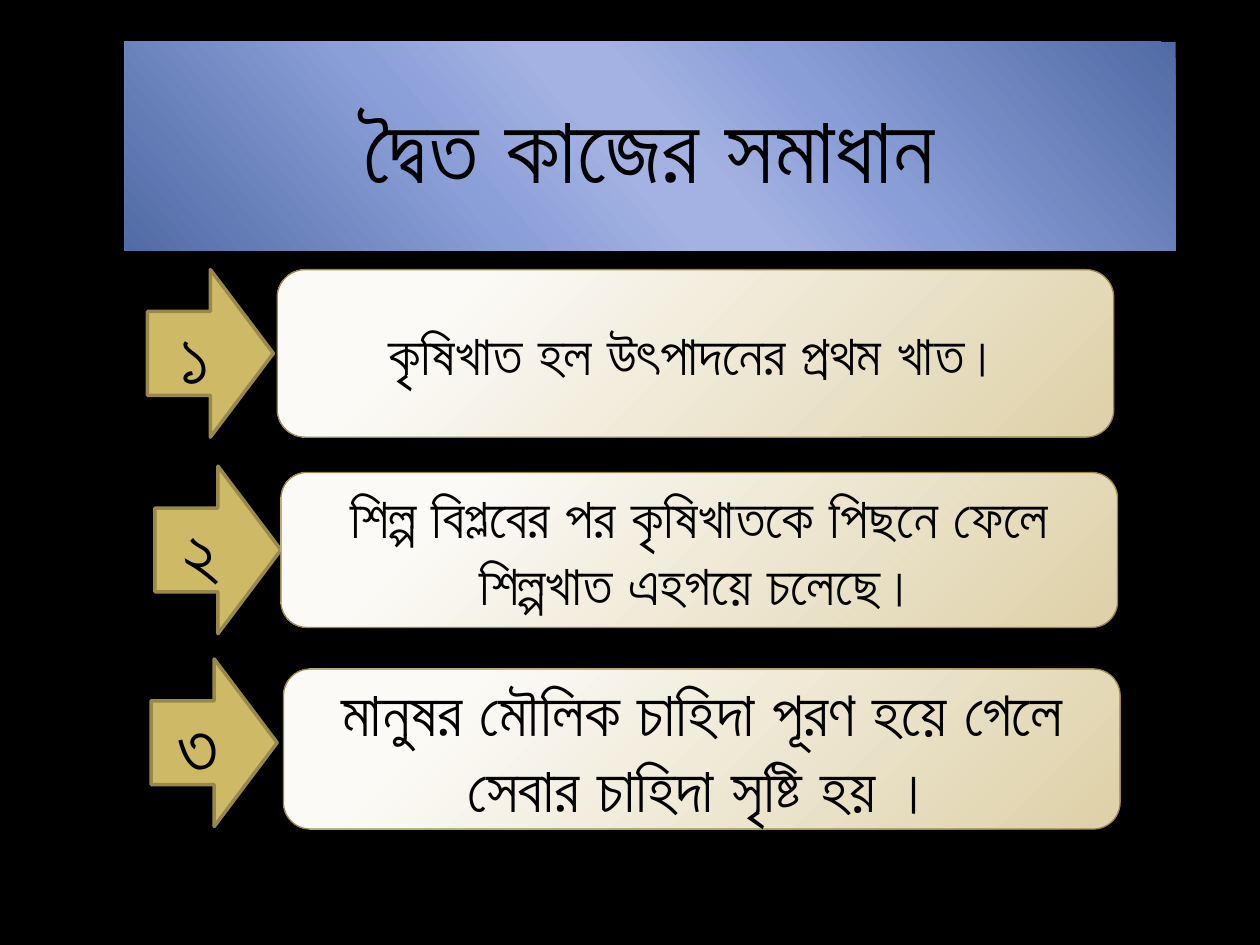
from lxml.etree import SubElement
from pptx import Presentation
from pptx.dml.color import RGBColor
from pptx.enum.shapes import MSO_SHAPE as Preset
from pptx.enum.text import MSO_ANCHOR as Anchor, MSO_AUTO_SIZE as AutoSize, PP_ALIGN as Align
from pptx.oxml.ns import qn
from pptx.util import Inches, Pt

TITLE = "দ্বৈত কাজের সমাধান"
TITLE_BOX = (0.99, 0.33, 8.34, 1.66)

# number, arrow (left, top), statement, card (left, top, height), text size
ROWS = [
    ("১", (1.17, 2.14), "কৃষিখাত হল উৎপাদনের প্রথম খাত।", (2.2, 2.14, 1.33), 32),
    ("২", (1.23, 3.7), "শিল্প বিপ্লবের পর কৃষিখাতকে পিছনে ফেলে শিল্পখাত এহগয়ে চলেছে।",
     (2.23, 3.75, 1.23), 32),
    ("৩", (1.2, 5.23), "মানুষর মৌলিক চাহিদা পূরণ হয়ে গেলে সেবার চাহিদা সৃষ্টি হয় ।",
     (2.25, 5.31, 1.27), 36),
]
ARROW_SIZE = (1, 1.33)
CARD_WIDTH = 6.64
FONT = "Arial"
COLORS = {
    "black": "000000", "gold": "CEB966", "arrow line": "98894B", "card line": "998946",
}
TITLE_STOPS = [(0, "516BA6"), (33, "899DD6"), (47, "A3B2E2"),
               (53, "A3B2E2"), (68, "8A9ED7"), (100, "516BA6")]
CARD_STOPS = [(20, "FBFAF6"), (100, "DED1A8")]


def color(name):
    return RGBColor.from_string(COLORS[name])


def fill_gradient(shape, stops, angle=None):
    """Fill linearly at the angle, or in circles from the top left corner without one."""
    shape.fill.gradient()
    gradient = shape._element.spPr.find(qn("a:gradFill"))
    gradient.clear()
    stop_list = SubElement(gradient, qn("a:gsLst"))
    for position, value in stops:
        stop = SubElement(stop_list, qn("a:gs"), pos=str(position * 1000))
        SubElement(stop, qn("a:srgbClr"), val=value)
    if angle is not None:
        SubElement(gradient, qn("a:lin"), ang=str(angle * 60000), scaled="0")
    else:
        circle = SubElement(gradient, qn("a:path"), path="circle")
        SubElement(circle, qn("a:fillToRect"), l="-15000", t="-15000", r="115000", b="115000")


def write(shape, text, size):
    frame = shape.text_frame
    frame.text = text
    frame.word_wrap = True
    frame.auto_size = AutoSize.NONE
    frame.vertical_anchor = Anchor.MIDDLE
    paragraph = frame.paragraphs[0]
    paragraph.alignment = Align.CENTER
    font = paragraph.runs[0].font
    font.size = Pt(size)
    font.name = FONT
    font.color.rgb = color("black")
    SubElement(font._element, qn("a:cs"), typeface=FONT)


def add_shape(slide, preset, box, line, width):
    shape = slide.shapes.add_shape(preset, *map(Inches, box))
    shape.shadow.inherit = False
    shape.line.color.rgb = color(line)
    shape.line.width = Pt(width)
    return shape


def add_title(slide):
    title = slide.shapes.title
    title.left, title.top, title.width, title.height = map(Inches, TITLE_BOX)
    properties = title._element.spPr
    geometry = SubElement(properties, qn("a:prstGeom"), prst="ellipse")
    SubElement(geometry, qn("a:avLst"))
    fill_gradient(title, TITLE_STOPS, 139)
    write(title, TITLE, 54)


def add_row(slide, number, arrow_corner, statement, card_place, size):
    arrow = add_shape(slide, Preset.RIGHT_ARROW, arrow_corner + ARROW_SIZE, "arrow line", 2)
    arrow.fill.solid()
    arrow.fill.fore_color.rgb = color("gold")
    write(arrow, number, 44)

    left, top, height = card_place
    card = add_shape(slide, Preset.ROUNDED_RECTANGLE, (left, top, CARD_WIDTH, height),
                     "card line", 0.75)
    fill_gradient(card, CARD_STOPS)
    write(card, statement, size)


def main():
    presentation = Presentation()
    presentation.slide_width, presentation.slide_height = Inches(10), Inches(7.5)
    slide = presentation.slides.add_slide(presentation.slide_layouts[5])
    slide.background.fill.solid()
    slide.background.fill.fore_color.rgb = color("black")
    add_title(slide)
    for row in ROWS:
        add_row(slide, *row)
    presentation.save("out.pptx")


if __name__ == "__main__":
    main()
